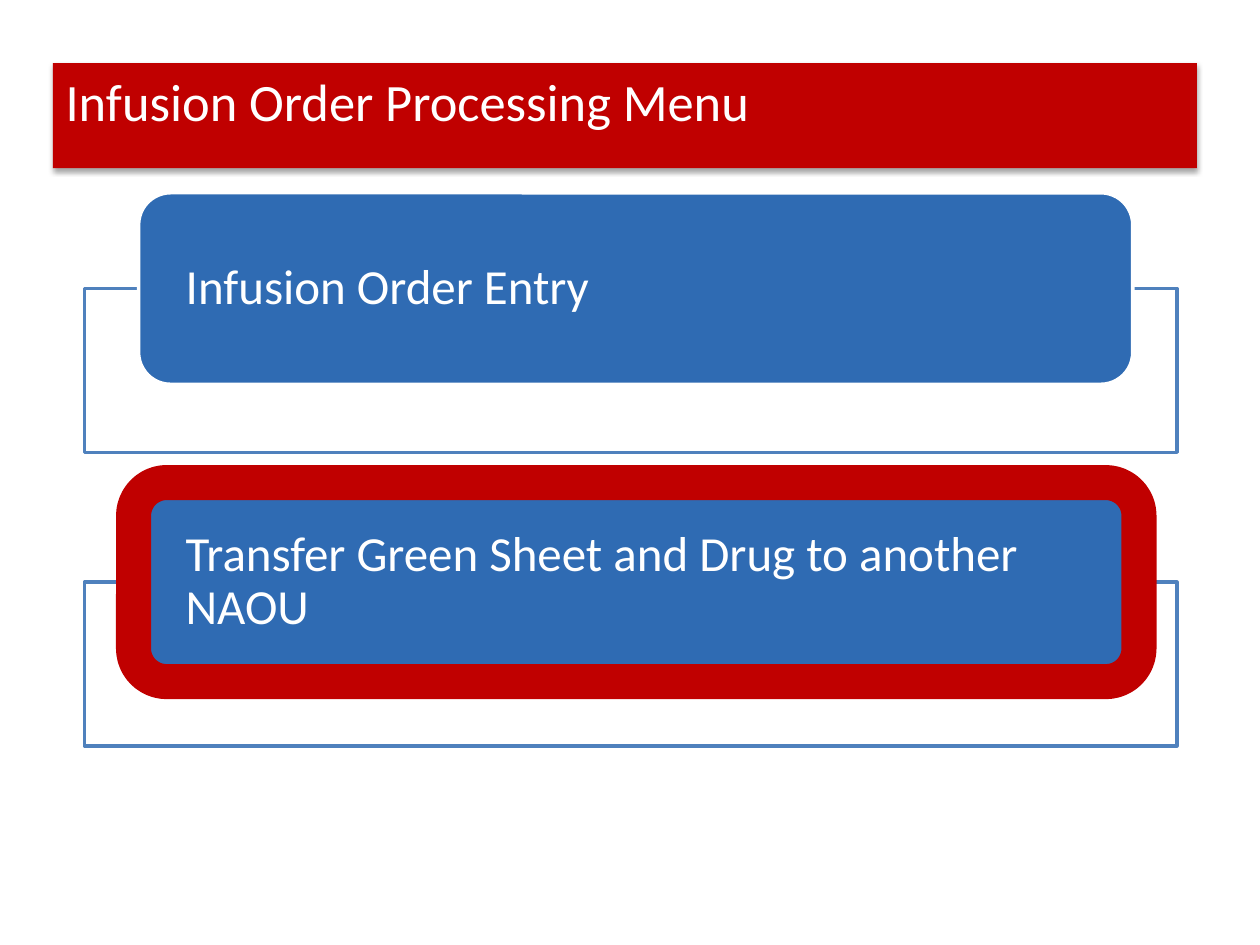
from lxml.etree import SubElement
from pptx import Presentation
from pptx.dml.color import RGBColor
from pptx.enum.shapes import MSO_SHAPE
from pptx.enum.text import MSO_ANCHOR, MSO_AUTO_SIZE, PP_ALIGN
from pptx.oxml.ns import qn
from pptx.util import Inches, Pt

COLORS = {
    "red": "C00000",
    "blue": "2F6BB3",
    "frame": "4F81BD",
    "white": "FFFFFF",
    "shadow": "000000",
}
FIRST_CARD_TOP = 1.53
CARD_STEP = 2.33
CARD_HEIGHT = 1.52


def rgb(name):
    return RGBColor.from_string(COLORS[name])


def write_text(frame, text, size, color="white", font="Calibri",
               anchor=MSO_ANCHOR.MIDDLE, line_spacing=1.0, side_inset=0.1, end_inset=0.05):
    frame.word_wrap = True
    frame.vertical_anchor = anchor
    frame.margin_left = frame.margin_right = Inches(side_inset)
    frame.margin_top = frame.margin_bottom = Inches(end_inset)
    paragraph = frame.paragraphs[0]
    paragraph.alignment = PP_ALIGN.LEFT
    paragraph.line_spacing = line_spacing
    run = paragraph.add_run()
    run.text = text
    run.font.name = font
    run.font.size = Pt(size)
    run.font.color.rgb = rgb(color)


def add_alpha(color_element, percent):
    SubElement(color_element, qn("a:alpha"), val=str(percent * 1000))


class MenuSlide:
    def __init__(self, slide):
        self.slide = slide

    def box(self, preset, left, top, width, height, line, line_width, fill=None):
        shape = self.slide.shapes.add_shape(
            preset, Inches(left), Inches(top), Inches(width), Inches(height))
        shape.shadow.inherit = False
        if fill:
            shape.fill.solid()
            shape.fill.fore_color.rgb = rgb(fill)
        else:
            shape.fill.background()
        shape.line.color.rgb = rgb(line)
        shape.line.width = Pt(line_width)
        return shape

    def title(self, text):
        banner = self.slide.shapes.title
        banner.left, banner.top = Inches(0.42), Inches(0.5)
        banner.width, banner.height = Inches(9.08), Inches(0.61)
        banner.fill.solid()
        banner.fill.fore_color.rgb = rgb("red")
        write_text(banner.text_frame, text, 30, anchor=MSO_ANCHOR.TOP)
        banner.text_frame.auto_size = MSO_AUTO_SIZE.SHAPE_TO_FIT_TEXT
        effects = SubElement(banner.element.spPr, qn("a:effectLst"))
        shadow = SubElement(effects, qn("a:outerShdw"), blurRad=str(Pt(3.1)),
                            dist=str(Pt(1.8)), dir="5400000", rotWithShape="0")
        add_alpha(SubElement(shadow, qn("a:srgbClr"), val=COLORS["shadow"]), 35)

    def frame(self, top):
        frame = self.box(MSO_SHAPE.RECTANGLE, 0.67, top, 8.67, 1.3, "frame", 2, "white")
        add_alpha(frame.element.spPr.find(qn("a:solidFill"))[0], 90)

    def card(self, text, top, width):
        card = self.box(MSO_SHAPE.ROUNDED_RECTANGLE, 1.1, top, width, CARD_HEIGHT,
                        "white", 2, "blue")
        write_text(card.text_frame, text, 28, line_spacing=0.9, side_inset=0.3, end_inset=0)

    def highlight(self, card_top):
        self.box(MSO_SHAPE.ROUNDED_RECTANGLE, 1.06, card_top - 0.03, 7.98, 1.58, "red", 20)


def main():
    presentation = Presentation()
    presentation.slide_width, presentation.slide_height = Inches(10), Inches(7.5)
    title_only = presentation.slide_layouts[5]
    menu = MenuSlide(presentation.slides.add_slide(title_only))

    menu.title("Infusion Order Processing Menu")
    options = [
        ("Infusion Order Entry", 7.89),
        ("Transfer Green Sheet and Drug to another NAOU", 7.84),
    ]
    for index, (label, width) in enumerate(options):
        card_top = FIRST_CARD_TOP + index * CARD_STEP
        menu.frame(card_top + CARD_HEIGHT / 2)
        menu.card(label, card_top, width)
    menu.highlight(card_top)

    presentation.save("out.pptx")


if __name__ == "__main__":
    main()
